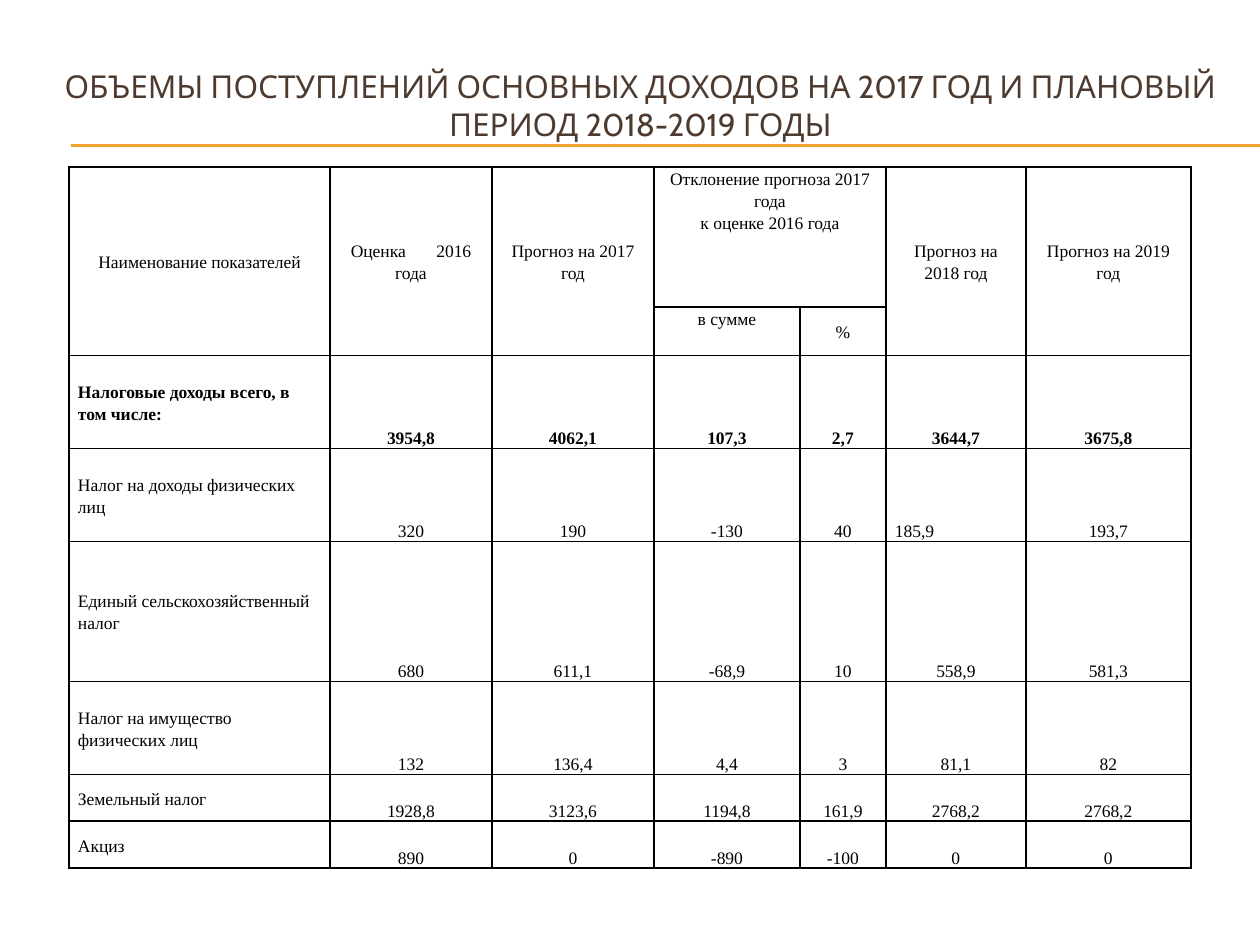
import pptx
import pptx.util
import pptx.dml.color
import pptx.enum.shapes
import pptx.enum.text
import pptx.oxml
import pptx.oxml.ns
import lxml.etree

SCALE = 914400 / 126
ALIGN = pptx.enum.text.PP_ALIGN
ANCHOR = pptx.enum.text.MSO_ANCHOR

THEME = {
    "title": {"name": "Cabin", "size": 18, "color": "4E3B30"},
    "cell": {"name": "Times New Roman", "size": 10, "color": "000000"},
    "rule": "F0A22E",
    "rule_width": 0.75,
    "border": "000000",
    "border_width": 1,
    "leading": 1.15,
    "wide_gap": 15,
}

TITLE = "ОБЪЕМЫ ПОСТУПЛЕНИЙ ОСНОВНЫХ ДОХОДОВ НА 2017 ГОД И ПЛАНОВЫЙ ПЕРИОД 2018-2019 ГОДЫ"
COLS = [261, 162, 162, 146, 86, 140, 165]
ROWS = [140, 47, 93, 93, 140, 93, 47, 47]
MERGES = [(0, c, 1, c) for c in (0, 1, 2, 5, 6)] + [(0, 3, 0, 4)]
HEADS = [
    (0, 0, "Наименование показателей", ANCHOR.MIDDLE),
    (0, 1, "Оценка\t2016 года", ANCHOR.MIDDLE),
    (0, 2, "Прогноз на 2017 год", ANCHOR.MIDDLE),
    (0, 3, "Отклонение прогноза 2017 года\nк оценке 2016 года", ANCHOR.TOP),
    (0, 5, "Прогноз на 2018 год", ANCHOR.MIDDLE),
    (0, 6, "Прогноз на 2019 год", ANCHOR.MIDDLE),
    (1, 3, "в сумме", ANCHOR.TOP),
    (1, 4, "%", ANCHOR.MIDDLE),
]
TAXES = [
    ("Налоговые доходы всего, в том числе:", "3954,8", "4062,1", "107,3", "2,7", "3644,7", "3675,8"),
    ("Налог на доходы физических лиц", "320", "190", "-130", "40", "185,9", "193,7"),
    ("Единый сельскохозяйственный налог", "680", "611,1", "-68,9", "10", "558,9", "581,3"),
    ("Налог на имущество физических лиц", "132", "136,4", "4,4", "3", "81,1", "82"),
    ("Земельный налог", "1928,8", "3123,6", "1194,8", "161,9", "2768,2", "2768,2"),
    ("Акциз", "890", "0", "-890", "-100", "0", "0"),
]
TOTAL_ROW = 2
LEFT_CELL = (3, 5)


def px(n):
    return pptx.util.Emu(round(n * SCALE))


def rgb(code):
    return pptx.dml.color.RGBColor.from_string(code)


def apply(item, values):
    for name, value in values.items():
        setattr(item, name, value)


def add_run(para, text, style, bold=False):
    run = para.add_run()
    run.text = text
    apply(run.font, {"name": style["name"], "size": pptx.util.Pt(style["size"]), "bold": bold})
    run.font.color.rgb = rgb(style["color"])
    return run


def add_title(slide, box):
    x, y, w, h = box
    frame = slide.shapes.add_textbox(*map(px, box)).text_frame
    apply(frame, {"word_wrap": True, "vertical_anchor": ANCHOR.MIDDLE})
    para = frame.paragraphs[0]
    para.alignment = ALIGN.CENTER
    add_run(para, TITLE, THEME["title"])


def add_rules(slide, box):
    x, y, w, h = box
    for top in (y, y + h):
        line = slide.shapes.add_connector(
            pptx.enum.shapes.MSO_CONNECTOR.STRAIGHT, px(x), px(top), px(x + w), px(top))
        line.line.color.rgb = rgb(THEME["rule"])
        line.line.width = pptx.util.Pt(THEME["rule_width"])
        lxml.etree.SubElement(line._element.spPr, pptx.oxml.ns.qn("a:effectLst"))


def add_borders(cell):
    props = cell._tc.get_or_add_tcPr()
    width = pptx.util.Pt(THEME["border_width"])
    for place, side in enumerate(("lnL", "lnR", "lnT", "lnB")):
        props.insert(place, pptx.oxml.parse_xml(
            f'<a:{side} {pptx.oxml.ns.nsdecls("a")} w="{width}"><a:solidFill>'
            f'<a:srgbClr val="{THEME["border"]}"/></a:solidFill></a:{side}>'))


def fill_cell(cell, text, anchor, align=ALIGN.CENTER, bold=False):
    cell.vertical_anchor = anchor
    frame = cell.text_frame
    for place, line in enumerate(text.split("\n")):
        para = frame.add_paragraph() if place else frame.paragraphs[0]
        apply(para, {"alignment": align, "line_spacing": THEME["leading"]})
        for part, words in enumerate(line.split("\t")):
            if part:
                gap = add_run(para, " ", THEME["cell"], bold)
                gap._r.get_or_add_rPr().set("spc", str(THEME["wide_gap"] * 100))
            add_run(para, words, THEME["cell"], bold)


def add_table(slide, box):
    table = slide.shapes.add_table(len(ROWS), len(COLS), *map(px, box)).table
    apply(table, {"first_row": False, "horz_banding": False})
    for col, width in zip(table.columns, COLS):
        col.width = px(width)
    for row, height in zip(table.rows, ROWS):
        row.height = px(height)
    for cell in table.iter_cells():
        apply(cell, {"margin_left": px(9), "margin_right": px(9),
                     "margin_top": 0, "margin_bottom": 0})
        cell.fill.background()
        add_borders(cell)
    for top, left, low, right in MERGES:
        table.cell(top, left).merge(table.cell(low, right))
    for r, c, text, anchor in HEADS:
        fill_cell(table.cell(r, c), text, anchor)
    for r, tax in enumerate(TAXES, TOTAL_ROW):
        for c, text in enumerate(tax):
            anchor = ANCHOR.BOTTOM if c else ANCHOR.MIDDLE
            align = ALIGN.LEFT if c == 0 or (r, c) == LEFT_CELL else ALIGN.CENTER
            fill_cell(table.cell(r, c), text, anchor, align, r == TOTAL_ROW)


def main():
    deck = pptx.Presentation()
    apply(deck, {"slide_width": px(1260), "slide_height": px(945)})
    slide = deck.slides.add_slide(deck.slide_layouts[6])
    add_rules(slide, (71, 145, 1189, 1))
    add_title(slide, (42, 63, 1197, 84))
    add_table(slide, (69, 167, sum(COLS), sum(ROWS)))
    deck.save("out.pptx")


if __name__ == "__main__":
    main()
